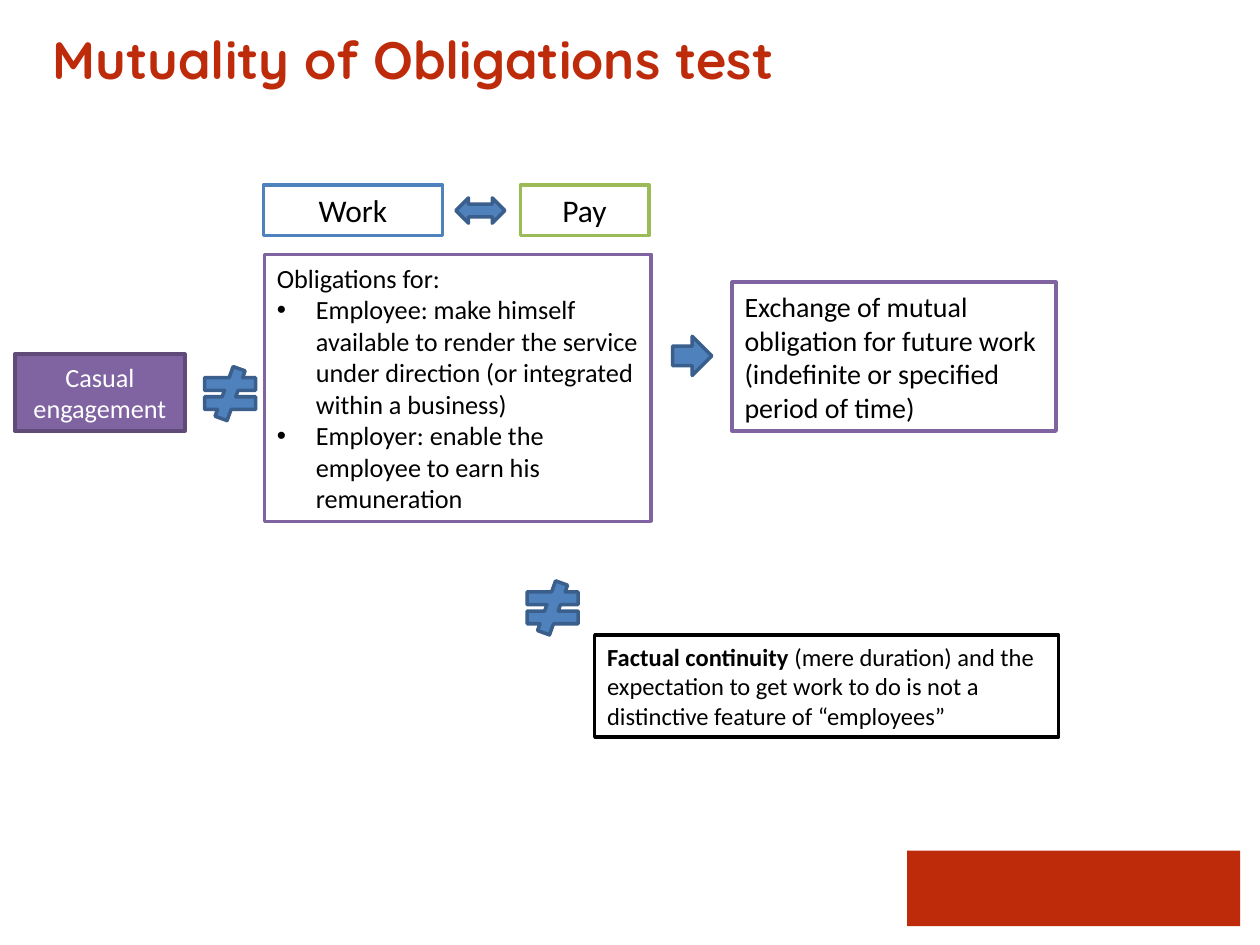
"""Build the slide on the mutuality of obligations test."""
from dataclasses import dataclass
from typing import Optional

import pptx
import pptx.dml.color
import pptx.enum.shapes
import pptx.enum.text
import pptx.oxml.ns
import pptx.util
from lxml import etree

Cm = pptx.util.Cm
Pt = pptx.util.Pt
RGBColor = pptx.dml.color.RGBColor
Kind = pptx.enum.shapes.MSO_SHAPE
Align = pptx.enum.text.PP_ALIGN
Anchor = pptx.enum.text.MSO_ANCHOR

RED = RGBColor(0xBD, 0x2B, 0x0B)
WHITE = RGBColor(0xFF, 0xFF, 0xFF)
BLACK = RGBColor(0x00, 0x00, 0x00)
BLUE = RGBColor(0x4F, 0x81, 0xBD)
DARK_BLUE = RGBColor(0x3A, 0x5F, 0x8C)
GREEN = RGBColor(0x9B, 0xBB, 0x59)
PURPLE = RGBColor(0x80, 0x64, 0xA2)
DARK_PURPLE = RGBColor(0x5F, 0x4A, 0x78)


@dataclass(frozen=True)
class Area:
    left: float
    top: float
    width: float
    height: float

    def lengths(self) -> tuple:
        return Cm(self.left), Cm(self.top), Cm(self.width), Cm(self.height)


@dataclass(frozen=True)
class Run:
    text: str
    bold: bool = False


@dataclass(frozen=True)
class Line:
    runs: tuple[Run, ...]
    bulleted: bool = False


@dataclass(frozen=True)
class Style:
    size: int
    color: RGBColor = BLACK
    align: Align = Align.LEFT
    font: str = "Calibri"


@dataclass(frozen=True)
class Box:
    area: Area
    border: RGBColor
    style: Style
    lines: tuple[Line, ...]
    fill: RGBColor = WHITE


@dataclass(frozen=True)
class Symbol:
    kind: Kind
    area: Area


def plain(text: str, bulleted: bool = False) -> Line:
    return Line((Run(text),), bulleted)


BOXES = (
    Box(Area(5.31, 3.73, 3.61, 1.02), BLUE, Style(18, align=Align.CENTER), (plain("Work"),)),
    Box(Area(10.49, 3.73, 2.59, 1.02), GREEN, Style(18, align=Align.CENTER), (plain("Pay"),)),
    Box(Area(5.33, 5.13, 7.8, 5.38), PURPLE, Style(15), (
        plain("Obligations for:"),
        plain("Employee: make himself available to render the service under direction "
              "(or integrated within a business)", True),
        plain("Employer: enable the employee to earn his remuneration", True),
    )),
    Box(Area(14.76, 5.69, 6.53, 3), PURPLE, Style(16), (
        plain("Exchange of mutual obligation for future work (indefinite or specified "
              "period of time)"),
    )),
    Box(Area(11.99, 12.8, 9.35, 2.06), BLACK, Style(14), (
        Line((Run("Factual continuity ", True),
              Run("(mere duration) and the expectation to get work to do is not a "
                  "distinctive feature of “employees”"))),
    )),
    Box(Area(0.3, 7.14, 3.43, 1.55), DARK_PURPLE, Style(15, WHITE, Align.CENTER),
        (plain("Casual engagement"),), PURPLE),
)

SYMBOLS = (
    Symbol(Kind.LEFT_RIGHT_ARROW, Area(9.19, 3.99, 0.99, 0.51)),
    Symbol(Kind.RIGHT_ARROW, Area(13.56, 6.78, 0.79, 0.79)),
    Symbol(Kind.MATH_NOT_EQUAL, Area(3.94, 7.39, 1.4, 1.09)),
    Symbol(Kind.MATH_NOT_EQUAL, Area(10.44, 11.71, 1.4, 1.09)),
)


def add_shape(slide, kind: Kind, area: Area, fill: RGBColor, border: Optional[RGBColor] = None):
    shape = slide.shapes.add_shape(kind, *area.lengths())
    shape.shadow.inherit = False
    shape.fill.solid()
    shape.fill.fore_color.rgb = fill
    if border is None:
        shape.line.fill.background()
    else:
        shape.line.color.rgb = border
        shape.line.width = Pt(2)
    return shape


def add_bullet(paragraph) -> None:
    properties = paragraph._p.get_or_add_pPr()
    properties.set("marL", str(Cm(0.79)))
    properties.set("indent", str(-Cm(0.79)))
    font = etree.SubElement(properties, pptx.oxml.ns.qn("a:buFont"))
    font.set("typeface", "Arial")
    bullet = etree.SubElement(properties, pptx.oxml.ns.qn("a:buChar"))
    bullet.set("char", "•")


def write_lines(text_frame, lines: tuple[Line, ...], style: Style) -> None:
    text_frame.word_wrap = True
    for index, line in enumerate(lines):
        paragraph = text_frame.add_paragraph() if index else text_frame.paragraphs[0]
        paragraph.alignment = style.align
        if line.bulleted:
            add_bullet(paragraph)
        for part in line.runs:
            run = paragraph.add_run()
            run.text = part.text
            run.font.name = style.font
            run.font.size = Pt(style.size)
            run.font.bold = part.bold
            run.font.color.rgb = style.color


def add_box(slide, box: Box) -> None:
    shape = add_shape(slide, Kind.RECTANGLE, box.area, box.fill, box.border)
    shape.text_frame.vertical_anchor = Anchor.MIDDLE
    write_lines(shape.text_frame, box.lines, box.style)


def add_title(slide) -> None:
    title = slide.shapes.add_textbox(*Area(-0.71, 0.43, 18.08, 3.18).lengths())
    title.text_frame.vertical_anchor = Anchor.TOP
    write_lines(title.text_frame, (Line((Run("Mutuality of Obligations test", True),)),),
                Style(30, RED, Align.CENTER, "Quicksand"))


def main() -> None:
    presentation = pptx.Presentation()
    presentation.slide_width = Cm(25.4)
    presentation.slide_height = Cm(19.05)
    slide = presentation.slides.add_slide(presentation.slide_layouts[6])
    add_shape(slide, Kind.RECTANGLE, Area(18.29, 17.15, 6.71, 1.52), RED)
    for box in BOXES:
        add_box(slide, box)
    for symbol in SYMBOLS:
        add_shape(slide, symbol.kind, symbol.area, BLUE, DARK_BLUE)
    add_title(slide)
    presentation.save("out.pptx")


if __name__ == "__main__":
    main()
